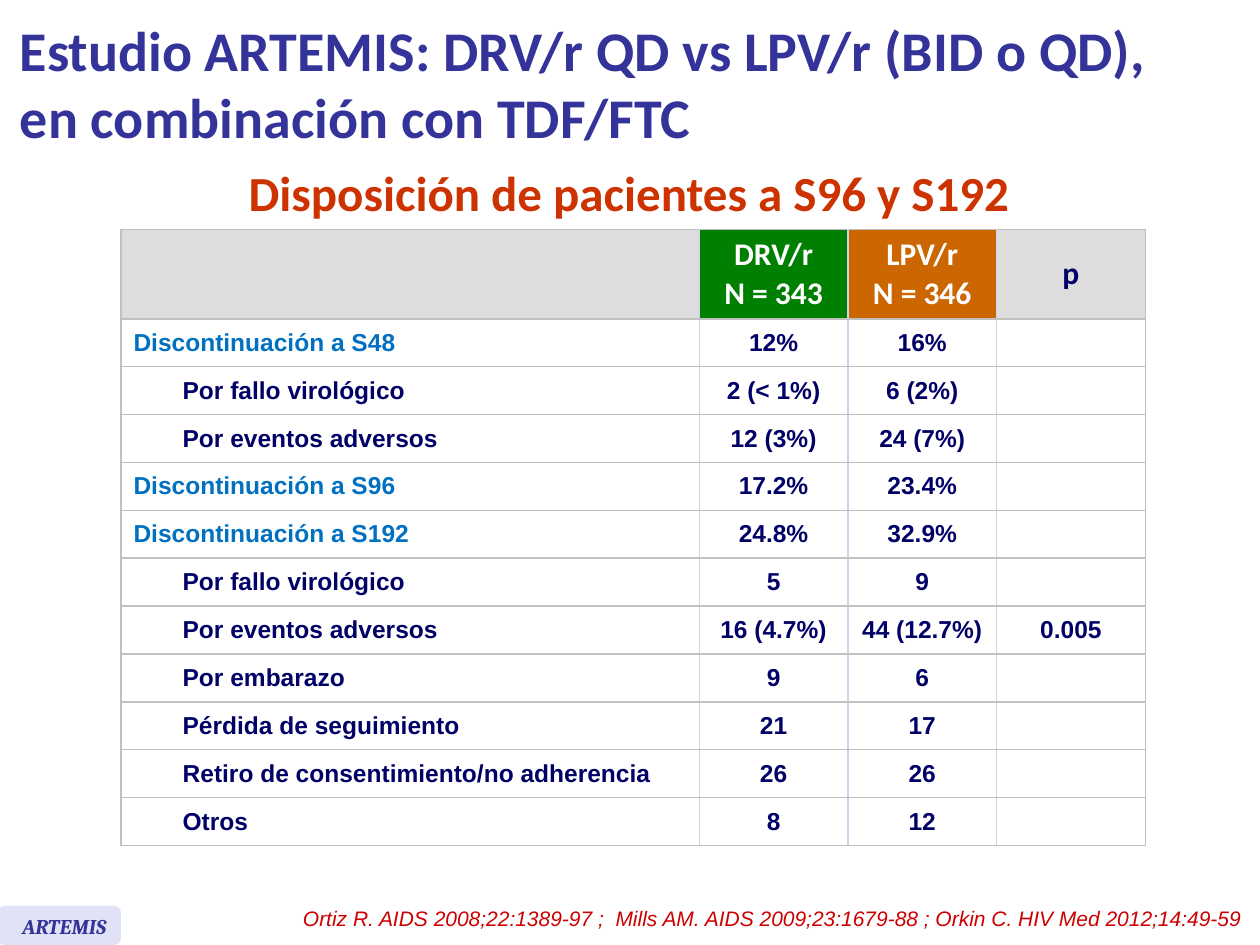
import pptx
import pptx.chart.data
import pptx.dml.color
import pptx.enum.shapes
import pptx.enum.text
import pptx.oxml.ns
import pptx.util
from lxml import etree

Inches, Pt = pptx.util.Inches, pptx.util.Pt
ALIGN = pptx.enum.text.PP_ALIGN
ANCHOR = pptx.enum.text.MSO_ANCHOR
qn = pptx.oxml.ns.qn

# Content
TITLE = "Estudio ARTEMIS: DRV/r QD vs LPV/r (BID o QD),\nen combinación con TDF/FTC"
SUBTITLE = "Disposición de pacientes a S96 y S192"
SOURCES = ("Ortiz R. AIDS 2008;22:1389-97 ;  Mills AM. AIDS 2009;23:1679-88 ; "
           "Orkin C. HIV Med 2012;14:49-59")
STUDY = "ARTEMIS"
HEADERS = [("", "DDDDDD", "000066"), ("DRV/r\nN = 343", "008000", "FFFFFF"),
           ("LPV/r\nN = 346", "CC6600", "FFFFFF"), ("p", "DDDDDD", "000066")]
# (is a main row, label, DRV/r, LPV/r, p)
ROWS = [
    (True, "Discontinuación a S48", "12%", "16%", ""),
    (False, "Por fallo virológico", "2 (< 1%)", "6 (2%)", ""),
    (False, "Por eventos adversos", "12 (3%)", "24 (7%)", ""),
    (True, "Discontinuación a S96", "17.2%", "23.4%", ""),
    (True, "Discontinuación a S192", "24.8%", "32.9%", ""),
    (False, "Por fallo virológico", "5", "9", ""),
    (False, "Por eventos adversos", "16 (4.7%)", "44 (12.7%)", "0.005"),
    (False, "Por embarazo", "9", "6", ""),
    (False, "Pérdida de seguimiento", "21", "17", ""),
    (False, "Retiro de consentimiento/no adherencia", "26", "26", ""),
    (False, "Otros", "8", "12", ""),
]
COLUMN_WIDTHS = [0.39, 4.2, 1.18, 1.18, 1.18]
HEADER_HEIGHT, ROW_HEIGHT = 0.71, 0.38
GRAY, LILAC = "C0C0C0", "D0D0F0"


def rgb(value):
    return pptx.dml.color.RGBColor.from_string(value)


def write(frame, text, size, font, color, align=ALIGN.LEFT, bold=False, italic=False):
    para = frame.paragraphs[0]
    para.alignment = align
    for number, line in enumerate(text.split("\n")):
        if number:
            para.add_line_break()
        span = para.add_run()
        span.text = line
        span.font.size, span.font.name = Pt(size), font
        span.font.bold, span.font.italic = bold, italic
        span.font.color.rgb = rgb(color)


def add_text(shapes, place, text, size, font, color, wrap=True, anchor=ANCHOR.TOP,
             grow=True, **style):
    box = shapes.add_textbox(*map(Inches, place))
    frame = box.text_frame
    frame.word_wrap, frame.vertical_anchor = wrap, anchor
    sizing = pptx.enum.text.MSO_AUTO_SIZE
    frame.auto_size = sizing.SHAPE_TO_FIT_TEXT if grow else sizing.NONE
    write(frame, text, size, font, color, **style)


def add_border(cell, side, color):
    line = etree.SubElement(cell._tc.get_or_add_tcPr(), qn("a:ln" + side), w=str(Pt(1)))
    if color:
        fill = etree.SubElement(line, qn("a:solidFill"))
        etree.SubElement(fill, qn("a:srgbClr"), val=color)
    else:
        etree.SubElement(line, qn("a:noFill"))


def fill_cell(cell, text, size, font, color, align=ALIGN.CENTER):
    cell.vertical_anchor = ANCHOR.MIDDLE
    if text:
        write(cell.text_frame, text, size, font, color, align, bold=True)
    else:
        # Keeps empty cells from growing the row
        etree.SubElement(cell.text_frame.paragraphs[0]._p, qn("a:endParaRPr"),
                         sz=str(size * 100))


deck = pptx.Presentation()
deck.slide_width, deck.slide_height = Inches(10), Inches(7.5)
page = deck.slides.add_slide(deck.slide_layouts[6])

# Table grid
heights = [HEADER_HEIGHT] + [ROW_HEIGHT] * len(ROWS)
table = page.shapes.add_table(
    len(heights), len(COLUMN_WIDTHS), Inches(0.96), Inches(1.82),
    Inches(sum(COLUMN_WIDTHS)), Inches(sum(heights))).table
table.first_row = table.horz_banding = False
for column, width in zip(table.columns, COLUMN_WIDTHS):
    column.width = Inches(width)
for row, height in zip(table.rows, heights):
    row.height = Inches(height)

# Borders and fills: gray outside and across, lilac between columns
last = len(COLUMN_WIDTHS) - 1
edges = [GRAY, None] + [LILAC] * (last - 1) + [GRAY]
for r in range(len(heights)):
    for c in range(last + 1):
        cell = table.cell(r, c)
        for side, color in zip("LRTB", (edges[c], edges[c + 1], GRAY, GRAY)):
            add_border(cell, side, color)
        cell.fill.solid()
        cell.fill.fore_color.rgb = rgb(HEADERS[max(c - 1, 0)][1] if r == 0 else "FFFFFF")
    if r == 0 or ROWS[r - 1][0]:
        table.cell(r, 0).merge(table.cell(r, 1))

# Table text
for c, (text, _, color) in enumerate(HEADERS):
    fill_cell(table.cell(0, c + 1 if c else 0), text, 18, "Calibri", color)
for r, (main, label, *values) in enumerate(ROWS, 1):
    fill_cell(table.cell(r, 0 if main else 1), label, 14, "Arial",
              "0070C0" if main else "000066", ALIGN.LEFT)
    if not main:
        fill_cell(table.cell(r, 0), "", 14, "Arial", "000066")
    for c, value in enumerate(values, 2):
        fill_cell(table.cell(r, c), value, 14, "Arial", "000066")

# Headings and sources
add_text(page.shapes, (1.75, 1.24, 6.48, 0.57), SUBTITLE, 28, "Calibri", "CC3300",
         wrap=False, align=ALIGN.CENTER, bold=True)
add_text(page.shapes, (1.32, 7.14, 8.64, 0.3), SOURCES, 12, "Arial", "CC0000",
         align=ALIGN.RIGHT, italic=True)
add_text(page.shapes, (0.06, 0.05, 9.94, 1.21), TITLE, 32, "Calibri", "333399",
         anchor=ANCHOR.MIDDLE, grow=False, bold=True)

# Study tag
tag = page.shapes.add_group_shape()
plate = tag.shapes.add_shape(pptx.enum.shapes.MSO_SHAPE.ROUNDED_RECTANGLE,
                             *map(Inches, (-0.02, 7.19, 0.98, 0.31)))
plate.shadow.inherit = False
plate.fill.solid()
plate.fill.fore_color.rgb = rgb("E2E2F6")
plate.line.fill.background()
add_text(tag.shapes, (0.08, 7.2, 0.93, 0.3), STUDY, 12, "Cambria", "333399",
         bold=True, italic=True)

deck.save("out.pptx")
